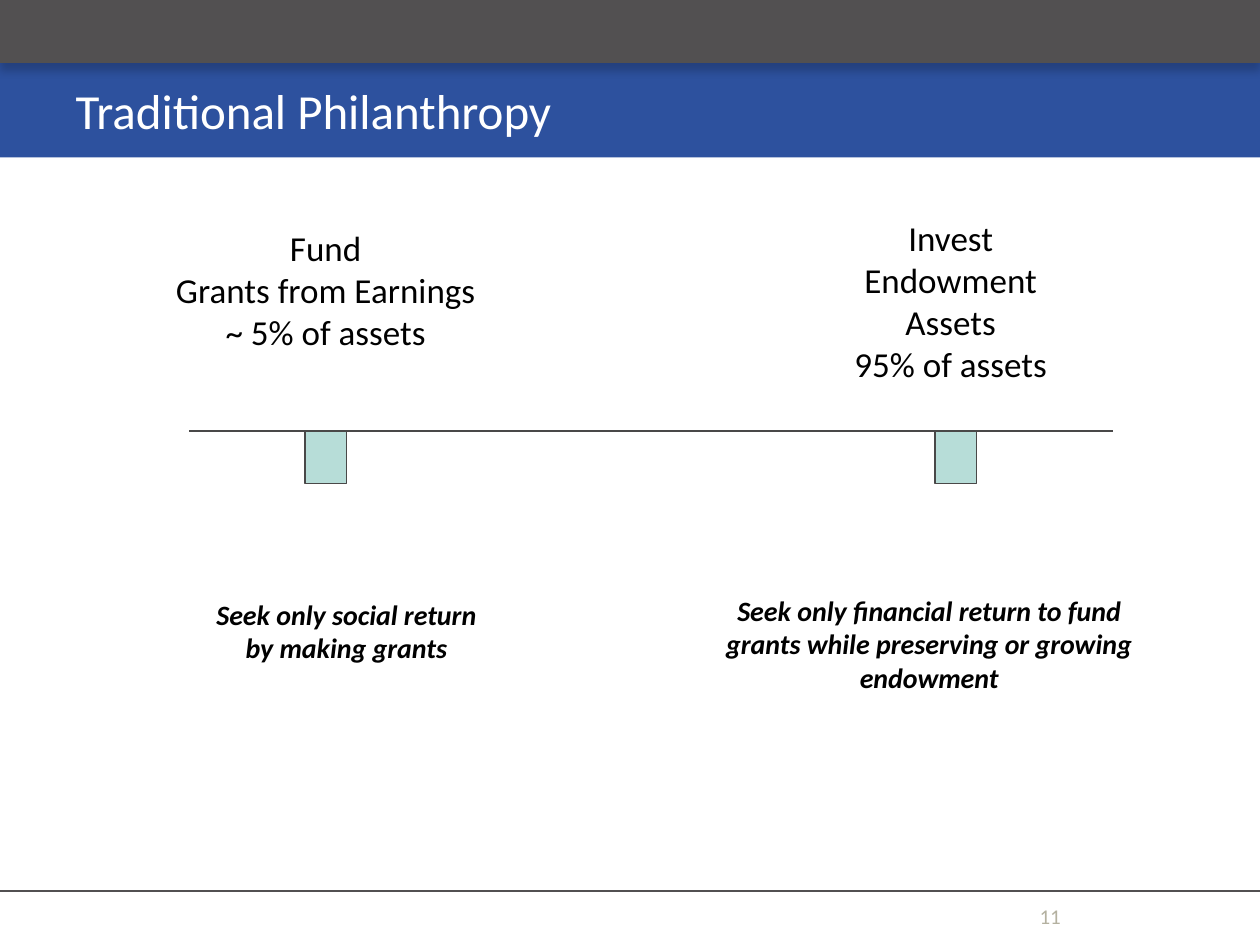
from lxml import etree
from pptx import Presentation
from pptx import util as u
from pptx.dml.color import RGBColor
from pptx.enum import shapes, text
from pptx.oxml.ns import qn

WIDTH, HEIGHT = 10, 7.5
FONT = "Calibri"
BLUE, GREY, LINE, TEAL = "2D519E", "525051", "494848", "3CA597"
BLACK, WHITE, NUMBER_GREY = "000000", "FFFFFF", "B4B1A0"

TITLE = "Traditional Philanthropy"
PAGE = "11"
# left, top, width, height, paragraphs
HEADINGS = [
    (1.25, 1.75, 2.67, 1.12, ["Fund", "Grants from Earnings", "~ 5% of assets"]),
    (6.42, 1.67, 2.25, 1.44, ["Invest", "Endowment Assets", "95% of assets"]),
]
GOALS = [
    (1, 4.69, 3.5, 0.64, ["Seek only social return", "by making grants"]),
    (5.5, 4.66, 3.75, 0.91, ["Seek only financial return to fund grants "
                             "while preserving or growing endowment"]),
]
BEAM_LEFT, BEAM_RIGHT, BEAM_TOP = 1.5, 8.83, 3.42
MARKER_LEFTS, MARKER_SIZE = (2.42, 7.42), (0.33, 0.42)
BAND_HEIGHTS = [(BLUE, HEIGHT / 6), (GREY, HEIGHT / 15)]
FOOTER_TOP = 7.07


def color(value):
    return RGBColor.from_string(value)


def inches(*values):
    return [u.Inches(value) for value in values]


def write(shape, paragraphs, size, fill, align=text.PP_ALIGN.CENTER,
          anchor=text.MSO_ANCHOR.TOP, emphasis=False):
    frame = shape.text_frame
    frame.text = "\n".join(paragraphs)
    frame.word_wrap = True
    frame.auto_size = text.MSO_AUTO_SIZE.NONE
    frame.vertical_anchor = anchor
    for paragraph in frame.paragraphs:
        paragraph.alignment = align
        for run in paragraph.runs:
            font = run.font
            font.name, font.size = FONT, u.Pt(size)
            font.bold = font.italic = emphasis
            font.color.rgb = color(fill)


def add_block(slide, left, top, width, height, fill):
    block = slide.shapes.add_shape(shapes.MSO_SHAPE.RECTANGLE,
                                   *inches(left, top, width, height))
    block.shadow.inherit = False
    block.fill.solid()
    block.fill.fore_color.rgb = color(fill)
    block.line.fill.background()
    return block


def add_line(slide, left, right, top, stroke, width):
    line = slide.shapes.add_connector(shapes.MSO_CONNECTOR.STRAIGHT,
                                      *inches(left, top, right, top))
    line.line.color.rgb = color(stroke)
    line.line.width = u.Pt(width)
    etree.SubElement(line._element.spPr, qn("a:effectLst"))


def set_alpha(color_element, percent):
    etree.SubElement(color_element, qn("a:alpha"), val=str(percent * 1000))


def add_drop_shadow(shape):
    effects = shape._element.spPr.find(qn("a:effectLst"))
    shadow = etree.SubElement(effects, qn("a:outerShdw"), blurRad=str(u.Pt(5)),
                              dist=str(u.Pt(4.3)), dir="5400000", rotWithShape="0")
    set_alpha(etree.SubElement(shadow, qn("a:srgbClr"), val=BLACK), 20)


def main():
    presentation = Presentation()
    presentation.slide_width, presentation.slide_height = inches(WIDTH, HEIGHT)
    slide = presentation.slides.add_slide(presentation.slide_layouts[5])

    bands = [add_block(slide, 0, 0, WIDTH, height, fill) for fill, height in BAND_HEIGHTS]
    add_drop_shadow(bands[-1])
    add_line(slide, 0, WIDTH, FOOTER_TOP, GREY, 1)

    title = slide.shapes.title
    title.left, title.top, title.width, title.height = inches(0.5, 0.5, 9, 0.75)
    write(title, [TITLE], 28, WHITE, text.PP_ALIGN.LEFT, text.MSO_ANCHOR.MIDDLE)
    slide.shapes._spTree.append(title._element)  # in front of the bands

    number = slide.shapes.add_textbox(*inches(7.17, 7.02, 2.33, 0.4))
    write(number, [PAGE], 12, NUMBER_GREY, anchor=text.MSO_ANCHOR.BOTTOM)

    add_line(slide, BEAM_LEFT, BEAM_RIGHT, BEAM_TOP, LINE, 0.75)
    for boxes, size, emphasis in ((HEADINGS, 20, False), (GOALS, 16, True)):
        for *place, paragraphs in boxes:
            box = slide.shapes.add_textbox(*inches(*place))
            write(box, paragraphs, size, BLACK, emphasis=emphasis)

    for left in MARKER_LEFTS:
        marker = add_block(slide, left, BEAM_TOP, *MARKER_SIZE, TEAL)
        marker.line.color.rgb = color(LINE)
        marker.line.width = u.Pt(0.75)
        set_alpha(marker._element.spPr.find(qn("a:solidFill"))[0], 37)

    presentation.save("out.pptx")


if __name__ == "__main__":
    main()
